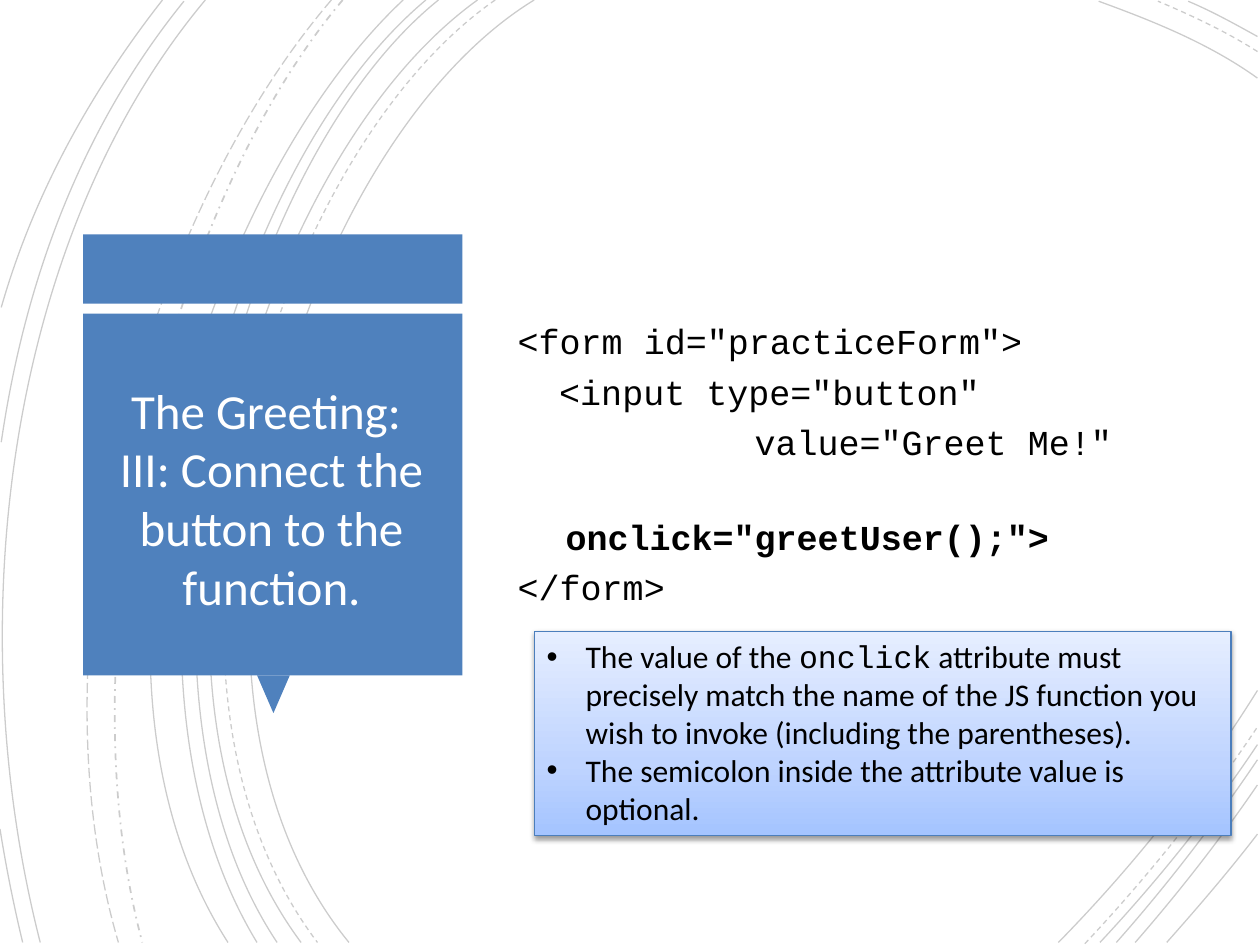
from dataclasses import dataclass
from typing import NamedTuple

from lxml import etree
from pptx import Presentation
from pptx import util as u
from pptx.dml import color
from pptx.enum import dml, shapes, text
from pptx.oxml import ns, parse_xml

PX = 9144  # EMU per px, 100 px to the inch


@dataclass(frozen=True)
class Theme:
    accent: str = "4F81BD"
    ink: str = "000000"
    paper: str = "FFFFFF"
    note_edge: str = "4B7EBC"
    note_stops: tuple = ((0, "A4C4FF"), (35, "BFD4FF"), (100, "E6EEFF"))
    body: str = "Calibri"
    code: str = "Courier New"
    title_size: int = 28
    code_size: int = 20
    note_size: int = 18


class Box(NamedTuple):
    left: int
    top: int
    width: int
    height: int

    def emu(self) -> list:
        return [value * PX for value in self]


class Arc(NamedTuple):
    points: tuple  # start, two control points, end
    dash: str = "SOLID"
    weight: float = 0.75


class CodeLine(NamedTuple):
    words: str
    indent: int = 0
    before: float = 4.8
    bold: bool = False


THEME = Theme()

ARCS = [
    # Right-hand family, each ring with its pieces at the far edge
    Arc(((424, 0), (236, 115), (107, 540), (277, 748))),
    Arc(((998, 62), (959, 34), (913, 16), (872, 1))),
    Arc(((840, 748), (897, 690), (952, 622), (998, 548))),
    Arc(((393, 0), (213, 125), (92, 537), (252, 748)), "DASH"),
    Arc(((998, 41), (973, 25), (945, 12), (919, 1)), "DASH"),
    Arc(((861, 749), (909, 698), (956, 640), (998, 577)), "DASH"),
    Arc(((379, 0), (202, 127), (82, 537), (239, 748))),
    Arc(((998, 29), (980, 19), (962, 9), (943, 1))),
    Arc(((873, 748), (917, 701), (960, 648), (998, 591))),
    Arc(((348, 0), (183, 133), (82, 541), (220, 748))),
    Arc(((886, 748), (925, 704), (963, 655), (998, 603))),
    Arc(((338, 0), (173, 138), (73, 533), (204, 748))),
    Arc(((901, 748), (935, 709), (968, 667), (998, 623))),
    Arc(((320, 0), (163, 147), (40, 529), (181, 748))),
    Arc(((926, 748), (950, 721), (975, 692), (998, 662))),
    # Left-hand family
    Arc(((272, 0), (132, 166), (49, 509), (113, 748)), "DASH_DOT", 1),
    Arc(((263, 0), (118, 169), (21, 499), (94, 748)), "LONG_DASH"),
    Arc(((163, 0), (8, 185), (-34, 490), (32, 748))),
    Arc(((146, 1), (69, 96), (21, 214), (1, 351))),
    Arc(((0, 658), (5, 689), (11, 719), (18, 748))),
    Arc(((129, 0), (75, 69), (28, 150), (1, 244))),
]

CODE = [
    CodeLine('<form id="practiceForm">', before=0),
    CodeLine('<input type="button"', 33),
    CodeLine('value="Greet Me!"', 188),
    CodeLine('onclick="greetUser();">', 38, 30, True),
    CodeLine("</form>"),
]

NOTES = [
    [("The value of the ", THEME.body), ("onclick", THEME.code),
     (" attribute must precisely match the name of the JS function you"
      " wish to invoke (including the parentheses).", THEME.body)],
    [("The semicolon inside the attribute value is optional.", THEME.body)],
]


def rgb(value: str) -> color.RGBColor:
    return color.RGBColor.from_string(value)


def apply(target, formats: dict) -> None:
    for name, value in formats.items():
        setattr(target, name, value)


def style(font, face: str, size: int, ink: str, bold: bool = False) -> None:
    apply(font, {"name": face, "size": u.Pt(size), "bold": bold})
    font.color.rgb = rgb(ink)


def draw_arc(slide, arc: Arc) -> None:
    start, *rest = arc.points
    builder = slide.shapes.build_freeform(*start, scale=PX)
    curve = builder.add_line_segments(rest, close=False).convert_to_shape()
    # Merge the three straight steps into one cubic curve
    steps = list(curve._element.iter(ns.qn("a:lnTo")))
    bezier = etree.SubElement(steps[0].getparent(), ns.qn("a:cubicBezTo"))
    for step in steps:
        bezier.append(step[0])
        step.getparent().remove(step)
    curve.fill.background()
    curve.shadow.inherit = False
    curve.line.color.rgb = rgb(THEME.ink)
    apply(curve.line, {"width": u.Pt(arc.weight),
                       "dash_style": getattr(dml.MSO_LINE, arc.dash)})
    tint = curve.line._ln.find(".//" + ns.qn("a:srgbClr"))
    etree.SubElement(tint, ns.qn("a:alpha"), val="20000")


def draw_block(slide, kind, box: Box, rotation: int = 0) -> None:
    block = slide.shapes.add_shape(kind, *box.emu())
    block.rotation = rotation
    block.fill.solid()
    block.fill.fore_color.rgb = rgb(THEME.accent)
    block.line.fill.background()
    block.shadow.inherit = False


def place_title(slide, box: Box, lines: list) -> None:
    title = slide.shapes.title
    apply(title, dict(zip(("left", "top", "width", "height"), box.emu())))
    apply(title.text_frame, {"word_wrap": True,
                             "auto_size": text.MSO_AUTO_SIZE.NONE,
                             "vertical_anchor": text.MSO_ANCHOR.MIDDLE})
    para = title.text_frame.paragraphs[0]
    para.alignment = text.PP_ALIGN.CENTER
    for number, words in enumerate(lines):
        if number:
            para.add_line_break()
        run = para.add_run()
        run.text = words
        style(run.font, THEME.body, THEME.title_size, THEME.paper)
    slide.shapes._spTree.append(title._element)  # bring above the panel


def next_paragraph(frame, number: int):
    return frame.add_paragraph() if number else frame.paragraphs[0]


def draw_code(slide, box: Box, lines: list) -> None:
    frame = slide.shapes.add_textbox(*box.emu()).text_frame
    apply(frame, {"word_wrap": True, "margin_bottom": 25 * PX,
                  "vertical_anchor": text.MSO_ANCHOR.MIDDLE})
    for number, line in enumerate(lines):
        para = next_paragraph(frame, number)
        para.space_before = u.Pt(line.before)
        para._p.get_or_add_pPr().set("marL", str(line.indent * PX))
        run = para.add_run()
        run.text = line.words
        style(run.font, THEME.code, THEME.code_size, THEME.ink, line.bold)


def draw_notes(slide, box: Box, notes: list) -> None:
    panel = slide.shapes.add_shape(shapes.MSO_SHAPE.RECTANGLE, *box.emu())
    panel.line.color.rgb = rgb(THEME.note_edge)
    panel.line.width = u.Pt(0.75)
    panel.shadow.inherit = False
    # Three-stop gradient and soft shadow
    stops = "".join(f'<a:gs pos="{at * 1000}"><a:srgbClr val="{tint}"/></a:gs>'
                    for at, tint in THEME.note_stops)
    properties = panel._element.spPr
    properties.find(ns.qn("a:prstGeom")).addnext(parse_xml(
        f'<a:gradFill {ns.nsdecls("a")} rotWithShape="1"><a:gsLst>{stops}</a:gsLst>'
        '<a:lin ang="16200000" scaled="0"/></a:gradFill>'))
    properties.find(ns.qn("a:effectLst")).append(parse_xml(
        f'<a:outerShdw {ns.nsdecls("a")} blurRad="{u.Pt(3.1)}" dist="{u.Pt(1.6)}"'
        ' dir="5400000" rotWithShape="0"><a:srgbClr val="000000">'
        '<a:alpha val="38000"/></a:srgbClr></a:outerShdw>'))
    frame = panel.text_frame
    apply(frame, {"word_wrap": True, "vertical_anchor": text.MSO_ANCHOR.TOP})
    for number, note in enumerate(notes):
        para = next_paragraph(frame, number)
        para.alignment = text.PP_ALIGN.LEFT
        bullet = para._p.get_or_add_pPr()
        apply_indent = {"marL": 31 * PX, "indent": -31 * PX}
        for name, value in apply_indent.items():
            bullet.set(name, str(value))
        etree.SubElement(bullet, ns.qn("a:buFont"), typeface="Arial")
        etree.SubElement(bullet, ns.qn("a:buChar"), char="•")
        for words, face in note:
            run = para.add_run()
            run.text = words
            style(run.font, face, THEME.note_size, THEME.ink)


def main() -> None:
    deck = Presentation()
    deck.slide_width, deck.slide_height = 1000 * PX, 750 * PX
    slide = deck.slides.add_slide(deck.slide_layouts[5])
    # Background rings
    for arc in ARCS:
        draw_arc(slide, arc)
    # Title panel: top band, pointer and body
    draw_block(slide, shapes.MSO_SHAPE.RECTANGLE, Box(66, 186, 301, 55))
    draw_block(slide, shapes.MSO_SHAPE.ISOSCELES_TRIANGLE, Box(204, 536, 26, 30), 180)
    draw_block(slide, shapes.MSO_SHAPE.RECTANGLE, Box(66, 249, 301, 287))
    place_title(slide, Box(74, 264, 283, 262),
                ["The Greeting: ", "III: Connect the button to the function."])
    # Code sample and remarks
    draw_code(slide, Box(401, 264, 588, 228), CODE)
    draw_notes(slide, Box(424, 501, 553, 162), NOTES)
    deck.save("out.pptx")


if __name__ == "__main__":
    main()
